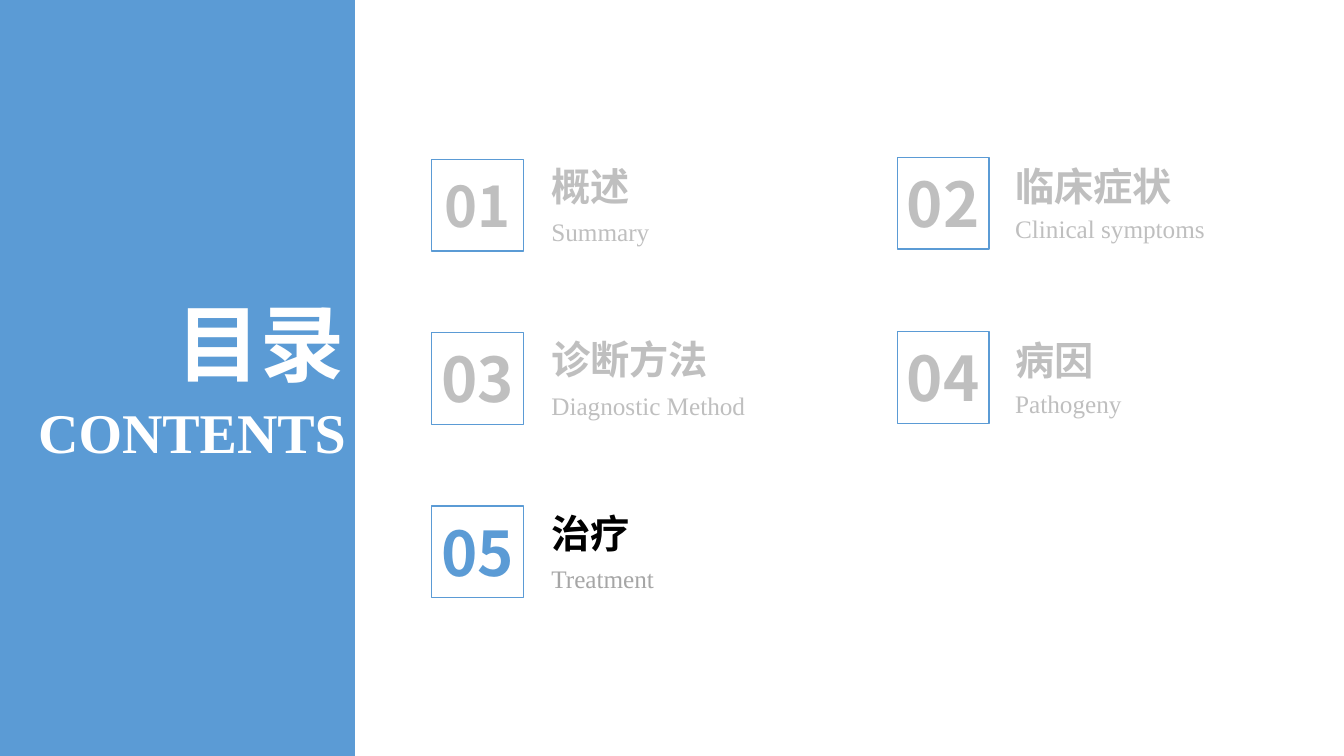
from collections import namedtuple

from lxml.etree import SubElement
from pptx import Presentation
from pptx.dml.color import RGBColor
from pptx.enum.shapes import MSO_SHAPE
from pptx.enum.text import MSO_AUTO_SIZE, PP_ALIGN
from pptx.oxml.ns import qn
from pptx.util import Inches, Pt

HUES = {"blue": "5B9BD5", "white": "FFFFFF", "black": "000000",
        "pale": "BFBFBF", "gray": "A6A6A6"}
SANS = "Noto Sans CJK SC"
SERIF = "Times New Roman"
SIDE = 0.91  # number frame

# Each column: frame left, text left, first top, row pitch, text offsets
Column = namedtuple("Column", "left text top pitch title_dy sub_dy")
COLUMNS = [Column(4.28, 5.37, 1.58, 1.72, -0.02, 0.52),
           Column(8.9, 9.97, 1.56, 1.73, 0, 0.51)]

# Title, subtitle, number size, number hue, title hue, subtitle hue
TOPICS = [
    ("概述", "Summary", 40, "pale", "pale", "pale"),
    ("临床症状", "Clinical symptoms", 44, "pale", "pale", "pale"),
    ("诊断方法", "Diagnostic Method", 44, "pale", "pale", "pale"),
    ("病因", "Pathogeny", 44, "pale", "pale", "pale"),
    ("治疗", "Treatment", 44, "blue", "black", "gray"),
]


def color(name):
    return RGBColor.from_string(HUES[name])


def add_text(shapes, area, words, size, hue, font=SANS, bold=True,
             align=PP_ALIGN.LEFT):
    box = shapes.add_textbox(*map(Inches, area))
    frame = box.text_frame
    frame.word_wrap = True
    frame.auto_size = MSO_AUTO_SIZE.SHAPE_TO_FIT_TEXT
    para = frame.paragraphs[0]
    para.alignment = align
    run = para.add_run()
    run.text = words
    run.font.size = Pt(size)
    run.font.bold = bold
    run.font.name = font
    run.font.color.rgb = color(hue)
    # East Asian glyphs take their own typeface
    SubElement(run._r.get_or_add_rPr(), qn("a:ea")).set("typeface", font)


def add_rect(shapes, area, fill=None, line=None):
    rect = shapes.add_shape(MSO_SHAPE.RECTANGLE, *map(Inches, area))
    rect.shadow.inherit = False
    if fill:
        rect.fill.solid()
        rect.fill.fore_color.rgb = color(fill)
    else:
        rect.fill.background()
    if line:
        rect.line.color.rgb = color(line)
        rect.line.width = Pt(1)
    else:
        rect.line.fill.background()


def add_topic(slide, index, topic):
    title, sub, size, num_hue, title_hue, sub_hue = topic
    row, side = divmod(index, len(COLUMNS))
    col = COLUMNS[side]
    top = col.top + row * col.pitch
    shapes = slide.shapes.add_group_shape().shapes

    # Title and subtitle
    add_text(shapes, (col.text, top + col.title_dy, 2.62, 0.57),
             title, 28, title_hue)
    add_text(shapes, (col.text, top + col.sub_dy, 2.62, 0.4),
             sub, 18, sub_hue, SERIF, False)

    # Number centred in its frame
    wide, high = (0.91, 0.77) if size == 40 else (0.98, 0.84)
    area = (col.left + (SIDE - wide) / 2, top + (SIDE - high) / 2, wide, high)
    add_text(shapes, area, f"{index + 1:02}", size, num_hue,
             align=PP_ALIGN.CENTER)
    add_rect(shapes, (col.left, top, SIDE, SIDE), line="blue")


def main():
    deck = Presentation()
    deck.slide_width = Inches(13.33)
    deck.slide_height = Inches(7.5)
    slide = deck.slides.add_slide(deck.slide_layouts[6])

    # Side panel
    add_rect(slide.shapes, (0, 0, 3.52, 7.5), fill="blue")
    add_text(slide.shapes, (0.98, 2.84, 2.54, 1.11), "目录", 60, "white",
             align=PP_ALIGN.RIGHT)
    add_text(slide.shapes, (0, 3.89, 3.53, 0.77), "CONTENTS", 40, "white",
             SERIF, align=PP_ALIGN.RIGHT)

    # Topics
    for index, topic in enumerate(TOPICS):
        add_topic(slide, index, topic)

    deck.save("out.pptx")


if __name__ == "__main__":
    main()
